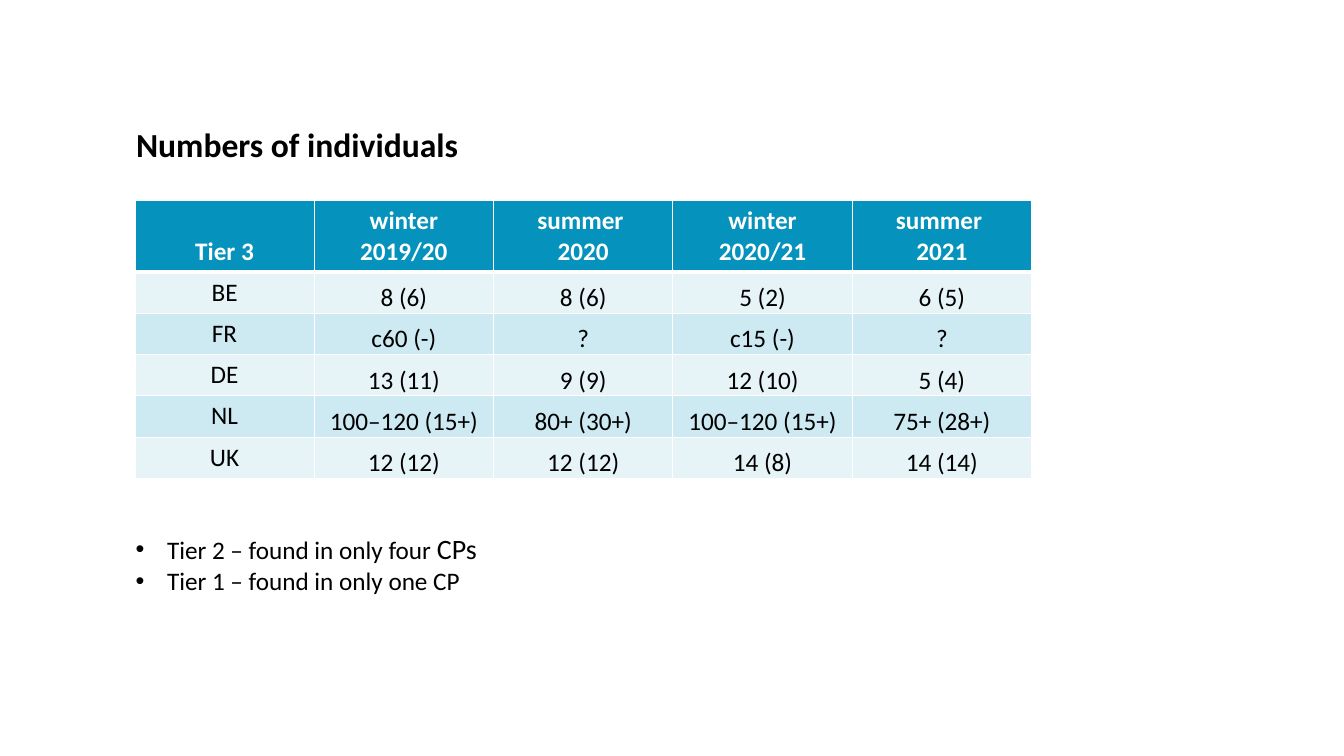
"""Build the slide with the numbers of individuals per country and season."""
from dataclasses import dataclass

from lxml.etree import SubElement
from pptx import Presentation
from pptx.dml.color import RGBColor
from pptx.enum.text import MSO_ANCHOR, PP_ALIGN
from pptx.oxml.ns import qn
from pptx.slide import Slide
from pptx.table import _Cell
from pptx.text.text import TextFrame, _Paragraph
from pptx.util import Cm, Pt

FONT = "Calibri"
BLACK = RGBColor(0x00, 0x00, 0x00)
WHITE = RGBColor(0xFF, 0xFF, 0xFF)
HEADER_BLUE = RGBColor(0x05, 0x92, 0xBD)
BANDS = (RGBColor(0xE6, 0xF4, 0xF8), RGBColor(0xCD, 0xE9, 0xF2))

LEFT, TOP = 3.4, 5.05
COL_WIDTH, HEADER_HEIGHT, ROW_HEIGHT = 4.52, 1.8, 1.04
THIN, THICK = 1, 3


@dataclass(frozen=True)
class Country:
    """Counts of one country for each season."""
    code: str
    counts: tuple[str, ...]


HEADERS = ("Tier 3", "winter\v2019/20", "summer \n2020", "winter\v2020/21", "summer \n2021")
COUNTRIES = (
    Country("BE", ("8 (6)", "8 (6)", "5 (2)", "6 (5)")),
    Country("FR", ("c60 (-)", "?", "c15 (-)", "?")),
    Country("DE", ("13 (11)", "9 (9)", "12 (10)", "5 (4)")),
    Country("NL", ("100–120 (15+)", "80+ (30+)", "100–120 (15+)", "75+ (28+)")),
    Country("UK", ("12 (12)", "12 (12)", "14 (8)", "14 (14)")),
)
NOTES = (
    (("Tier 2 – found in only four ", 18), ("CPs", 20)),
    (("Tier 1 – found in only one CP", 18),),
)


def set_font(p: _Paragraph, size: float, color: RGBColor, bold: bool = False) -> None:
    """Set the font of a whole paragraph."""
    p.font.name, p.font.size, p.font.bold = FONT, Pt(size), bold
    p.font.color.rgb = color


def set_borders(cell: _Cell, top: float, bottom: float) -> None:
    """Draw white borders around a cell."""
    tc_pr = cell._tc.get_or_add_tcPr()
    for side, width in (("L", THIN), ("R", THIN), ("T", top), ("B", bottom)):
        ln = SubElement(tc_pr, qn(f"a:ln{side}"), w=str(Pt(width)))
        SubElement(SubElement(ln, qn("a:solidFill")), qn("a:srgbClr"), val=str(WHITE))


def fill_cell(cell: _Cell, text: str, fill: RGBColor, color: RGBColor,
              bold: bool = False, top: float = THIN, bottom: float = THIN) -> None:
    """Write a centred text into a bordered, filled cell."""
    set_borders(cell, top, bottom)
    cell.fill.solid()
    cell.fill.fore_color.rgb = fill
    cell.text = text
    for p in cell.text_frame.paragraphs:
        p.alignment = PP_ALIGN.CENTER
        set_font(p, 18, color, bold)


def add_counts_table(slide: Slide) -> None:
    """Add the table of counts per country."""
    rows, cols = len(COUNTRIES) + 1, len(HEADERS)
    height = HEADER_HEIGHT + ROW_HEIGHT * len(COUNTRIES)
    table = slide.shapes.add_table(rows, cols, Cm(LEFT), Cm(TOP),
                                   Cm(COL_WIDTH * cols), Cm(height)).table
    for column in table.columns:
        column.width = Cm(COL_WIDTH)
    for i, row in enumerate(table.rows):
        row.height = Cm(ROW_HEIGHT if i else HEADER_HEIGHT)
    for j, header in enumerate(HEADERS):
        fill_cell(table.cell(0, j), header, HEADER_BLUE, WHITE, bold=True, bottom=THICK)
    table.cell(0, 0).vertical_anchor = MSO_ANCHOR.BOTTOM
    for i, country in enumerate(COUNTRIES):
        band, top = BANDS[i % 2], THIN if i else THICK
        fill_cell(table.cell(i + 1, 0), country.code, band, BLACK, top=top)
        for j, count in enumerate(country.counts, 1):
            cell = table.cell(i + 1, j)
            fill_cell(cell, count, band, BLACK, top=top)
            cell.vertical_anchor = MSO_ANCHOR.BOTTOM
            cell.margin_left = cell.margin_right = Cm(0.18)
            cell.margin_top = cell.margin_bottom = Cm(0)
            cell.text_frame.paragraphs[0].line_spacing = 1.07


def add_text_frame(slide: Slide, top: float, width: float, height: float) -> TextFrame:
    """Add a wrapping text box and return its text frame."""
    tf = slide.shapes.add_textbox(Cm(2.54), Cm(top), Cm(width), Cm(height)).text_frame
    tf.word_wrap = True
    return tf


def set_indent(p: _Paragraph, margin: float, hanging: float = 0) -> None:
    """Set the left margin and the hanging indent of a paragraph."""
    p_pr = p._p.get_or_add_pPr()
    p_pr.set("marL", str(Cm(margin)))
    p_pr.set("indent", str(-Cm(hanging)))


def add_title(slide: Slide) -> None:
    """Add the heading above the table."""
    p = add_text_frame(slide, 3.12, 25.45, 1.45).paragraphs[0]
    p.text = "Numbers of individuals"
    p.line_spacing = 0.9
    set_indent(p, 0.64)
    set_font(p, 24, BLACK, bold=True)


def add_notes(slide: Slide) -> None:
    """Add the bulleted remarks below the table."""
    tf = add_text_frame(slide, 13.28, 9.88, 3.84)
    for i, runs in enumerate(NOTES):
        p = tf.add_paragraph() if i else tf.paragraphs[0]
        set_indent(p, 1.42, 0.79)
        p_pr = p._p.get_or_add_pPr()
        SubElement(p_pr, qn("a:buFont"), typeface="Arial")
        SubElement(p_pr, qn("a:buChar"), char="•")
        set_font(p, 18, BLACK)
        for text, size in runs:
            r = p.add_run()
            r.text = text
            r.font.size = Pt(size)


def main() -> None:
    """Create and save the presentation."""
    prs = Presentation()
    prs.slide_width, prs.slide_height = Cm(33.87), Cm(19.05)
    slide = prs.slides.add_slide(prs.slide_layouts[6])
    add_counts_table(slide)
    add_title(slide)
    add_notes(slide)
    prs.save("out.pptx")


if __name__ == "__main__":
    main()
